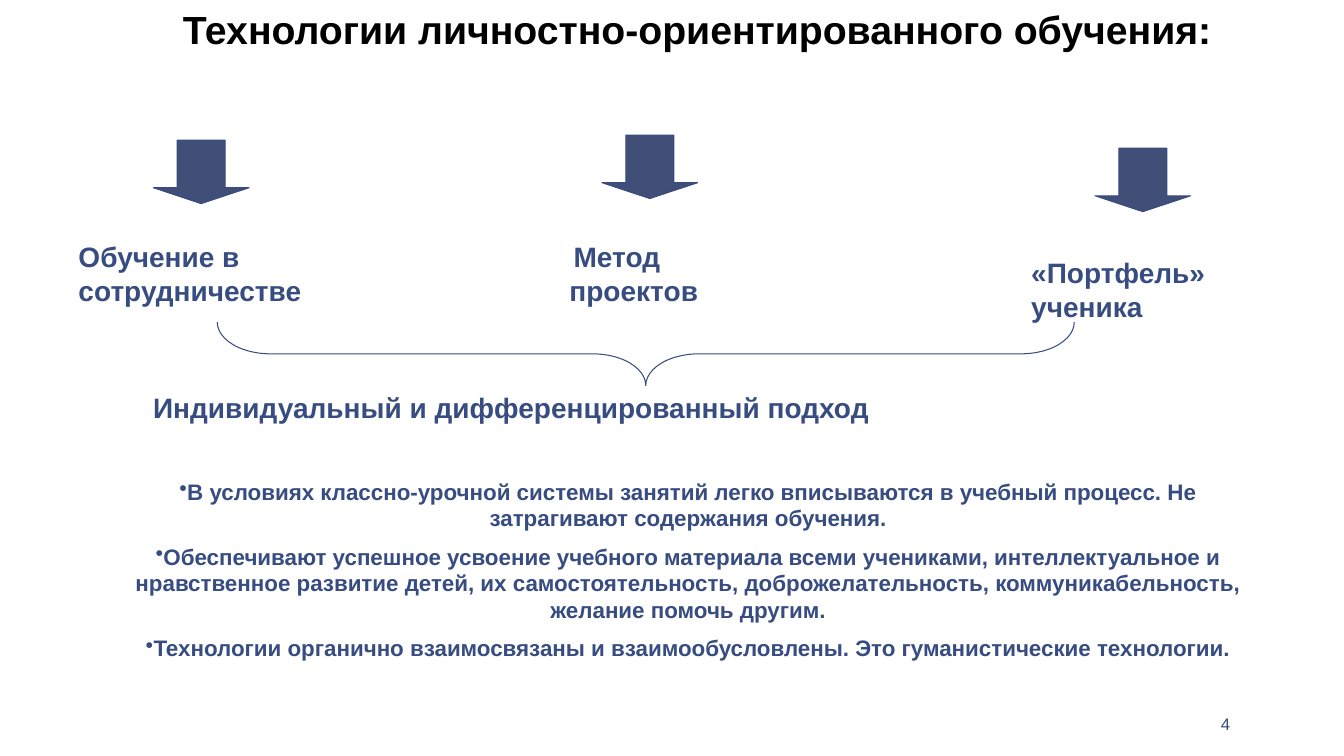
"""Builds a slide on technologies of learner-centred teaching."""
from pptx import Presentation, util as u
from pptx.dml import color
from pptx.enum import shapes, text
from pptx.oxml import xmlchemy as xml

KIND = shapes.MSO_SHAPE
SIDE = text.PP_ALIGN
INK = "374C81"


def tint(code):
    """Return the colour of a hex string."""
    return color.RGBColor.from_string(code)


class Page:
    """Holds the style and the current slide."""

    font = "Arial"

    def __init__(self, deck):
        """Add a blank slide to the deck."""
        self.slide = deck.slides.add_slide(deck.slide_layouts[6])

    def label(self, box, lines, size=20, ink=INK, bold=True, side=SIDE.LEFT,
              pad=(0.1, 0.05), low=False, dots=False, left=0, first=0):
        """Add a text box with one paragraph per line."""
        frame = self.slide.shapes.add_textbox(*map(u.Inches, box)).text_frame
        frame.word_wrap = True
        frame.margin_left = frame.margin_right = u.Inches(pad[0])
        frame.margin_top = frame.margin_bottom = u.Inches(pad[1])
        if low:
            frame.vertical_anchor = text.MSO_ANCHOR.BOTTOM
        frame.text = "\n".join(lines)
        for rank, para in enumerate(frame.paragraphs):
            para.alignment = side
            if rank:
                para.space_before = u.Pt(8)
            props = para._p.get_or_add_pPr()
            props.set("marL", str(u.Inches(left)))
            props.set("indent", str(u.Inches(first)))
            if dots:
                dot = xml.OxmlElement("a:buChar")
                dot.set("char", "•")
                props.append(dot)
            for run in para.runs:
                run.font.name = self.font
                run.font.size = u.Pt(size)
                run.font.bold = bold
                run.font.color.rgb = tint(ink)

    def draw(self, kind, box, adj, fill=None, turn=0):
        """Add an outlined preset shape."""
        item = self.slide.shapes.add_shape(kind, *map(u.Inches, box))
        item.shadow.inherit = False
        item.rotation = turn
        for rank, part in enumerate(adj):
            item.adjustments[rank] = part
        if fill:
            item.fill.solid()
            item.fill.fore_color.rgb = tint(fill)
        else:
            item.fill.background()
        item.line.color.rgb = tint(INK)
        item.line.width = u.Pt(0.75)


def main():
    """Build and save the slide."""
    deck = Presentation()
    deck.slide_width, deck.slide_height = u.Inches(13.33), u.Inches(7.5)
    page = Page(deck)
    page.label((0.89, 0, 12.05, 0.57),
               ["Технологии личностно-ориентированного обучения:"],
               size=28, ink="000000", side=SIDE.CENTER)
    for left, top in ((1.52, 1.39), (5.97, 1.34), (10.86, 1.47)):
        page.draw(KIND.DOWN_ARROW, (left, top, 0.95, 0.63), (0.5, 0.25),
                  fill="414E77")
    page.label((0.68, 2.33, 3.25, 0.77), ["Обучение в сотрудничестве"])
    page.label((5.17, 2.33, 2.33, 0.77), ["Метод\vпроектов"],
               left=0.38, first=0.04)
    page.label((10.13, 2.49, 2.83, 0.77), ["«Портфель» ученика"])
    page.draw(KIND.LEFT_BRACE, (6.09, -0.74, 0.63, 8.5), (0.84, 0.5), turn=270)
    page.label((1.42, 3.83, 9.87, 0.43),
               ["Индивидуальный и дифференцированный подход"])
    page.label((1, 4.69, 11.65, 1.99), [
        "В условиях классно-урочной системы занятий легко вписываются "
        "в учебный процесс. Не затрагивают содержания обучения.",
        "Обеспечивают успешное усвоение учебного материала всеми учениками, "
        "интеллектуальное и нравственное развитие детей, "
        "их самостоятельность, доброжелательность, коммуникабельность, "
        "желание помочь другим.",
        "Технологии органично взаимосвязаны и взаимообусловлены. "
        "Это гуманистические технологии.",
    ], size=16, side=SIDE.CENTER, dots=True)
    page.label((11.12, 7, 1.21, 0.35), ["4"], size=12, bold=False,
               side=SIDE.RIGHT, pad=(0.13, 0.07), low=True)
    deck.save("out.pptx")


if __name__ == "__main__":
    main()
